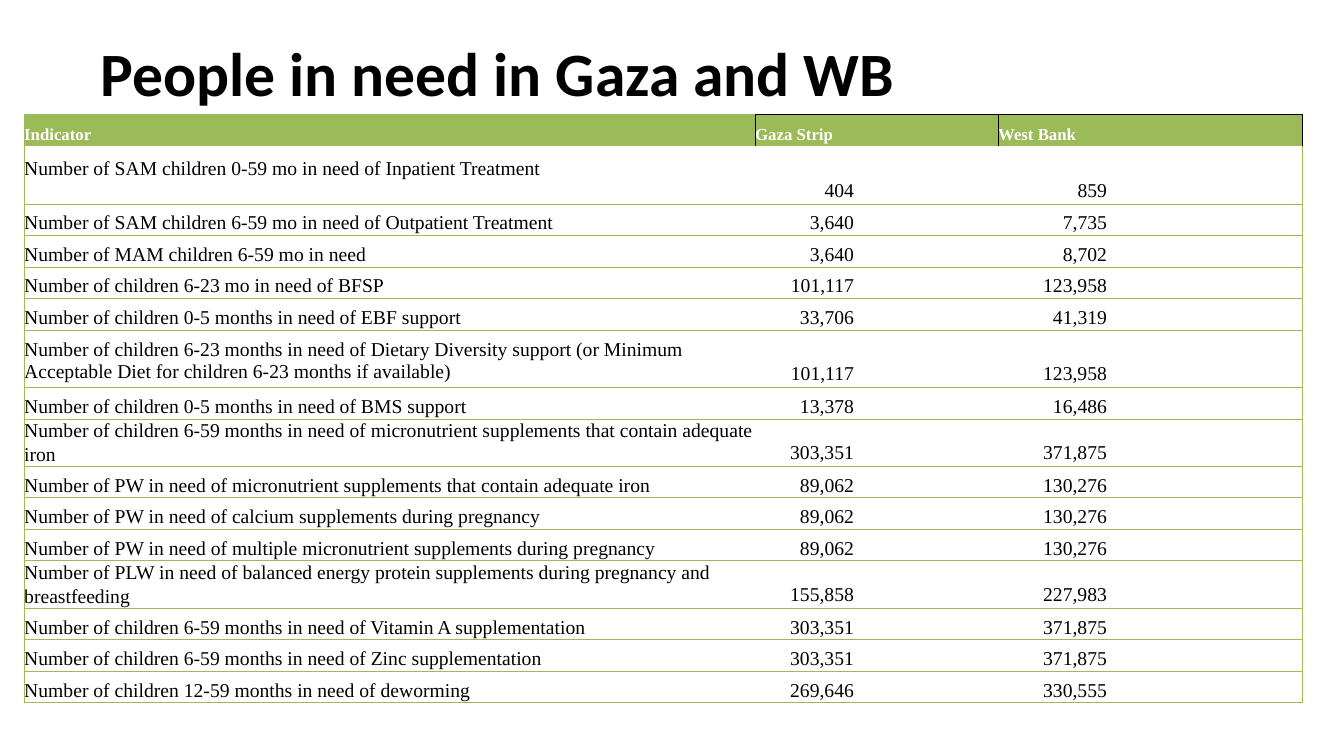
from dataclasses import dataclass

from lxml import etree
from pptx import Presentation, util as u
from pptx.dml.color import RGBColor
from pptx.enum import text as txt
from pptx.oxml import ns


@dataclass(frozen=True)
class Theme:
    green: str = "9BBA58"
    black: str = "000000"
    white: str = "FFFFFF"
    title_font: str = "Calibri"
    table_font: str = "Times New Roman"
    title_size: float = 44
    header_size: float = 12
    body_size: float = 14
    border: float = 0.5


@dataclass(frozen=True)
class RowStyle:
    """Row height in inches (None shares the rest); spacing in points."""
    height: float | None = None
    label_before: float = 5.5
    label_line: float | None = 16.1
    value_before: float = 5.5
    value_line: float = 16.1


THEME = Theme()
HEADER = RowStyle(0.32, 7.8, 14, 7.8, 14)
SPLIT_TOP = RowStyle(0.34, 7.2, 16.6)
SPLIT_BOTTOM = RowStyle(0.23, 0, 15.2, 0, 15.2)
PLAIN = RowStyle()
TALL = RowStyle(0.57, 6.7, None, 23)
TWO_LINE = RowStyle(0.47, 0, 16.6, 15.8)

TABLE_HEIGHT = 5.84
COLUMN_WIDTHS = [7.25, 2.41, 3.02]
VALUE_INDENTS = [0, 1.43, 1.94]
NO_GRID_STYLE = "{2D5ABB26-0587-4C30-8999-92F81FD0307C}"

ROWS = [
    (HEADER, "Indicator", "Gaza Strip", "West Bank"),
    (SPLIT_TOP, "Number of SAM children 0-59 mo in need of Inpatient Treatment", "", ""),
    (SPLIT_BOTTOM, "", "404", "859"),
    (PLAIN, "Number of SAM children 6-59 mo in need of Outpatient Treatment", "3,640", "7,735"),
    (PLAIN, "Number of MAM children 6-59 mo in need", "3,640", "8,702"),
    (PLAIN, "Number of children 6-23 mo in need of BFSP", "101,117", "123,958"),
    (PLAIN, "Number of children 0-5 months in need of EBF support", "33,706", "41,319"),
    (TALL, "Number of children 6-23 months in need of Dietary Diversity support (or Minimum "
           "Acceptable Diet for children 6-23 months if available)", "101,117", "123,958"),
    (PLAIN, "Number of children 0-5 months in need of BMS support", "13,378", "16,486"),
    (TWO_LINE, "Number of children 6-59 months in need of micronutrient supplements that contain "
               "adequate iron", "303,351", "371,875"),
    (PLAIN, "Number of PW in need of micronutrient supplements that contain adequate iron",
     "89,062", "130,276"),
    (PLAIN, "Number of PW in need of calcium supplements during pregnancy", "89,062", "130,276"),
    (PLAIN, "Number of PW in need of multiple micronutrient supplements during pregnancy",
     "89,062", "130,276"),
    (TWO_LINE, "Number of PLW in need of balanced energy protein supplements during pregnancy and\n"
               "breastfeeding", "155,858", "227,983"),
    (PLAIN, "Number of children 6-59 months in need of Vitamin A supplementation",
     "303,351", "371,875"),
    (PLAIN, "Number of children 6-59 months in need of Zinc supplementation", "303,351", "371,875"),
    (PLAIN, "Number of children 12-59 months in need of deworming", "269,646", "330,555"),
]


def write_text(frame, content, *, font, size, color, bold=False, align=txt.PP_ALIGN.LEFT,
               line=None, before=0, right_indent=0):
    """Write one paragraph per line of content; spacing is in points."""
    frame.word_wrap = True
    for index, words in enumerate(content.split("\n")):
        paragraph = frame.add_paragraph() if index else frame.paragraphs[0]
        paragraph.alignment = align
        paragraph.space_before = u.Pt(0 if index else before)
        if line:
            paragraph.line_spacing = u.Pt(line)
        if right_indent:
            paragraph._p.get_or_add_pPr().set("marR", str(u.Inches(right_indent)))
        paragraph.font.size = u.Pt(size)
        if not words:
            end = etree.SubElement(paragraph._p, ns.qn("a:endParaRPr"))
            end.set("sz", str(int(size * 100)))
            continue
        run = paragraph.add_run()
        run.text = words
        run.font.name = font
        run.font.size = u.Pt(size)
        run.font.bold = bold
        run.font.color.rgb = RGBColor.from_string(color)


def set_borders(cell, colors):
    """Draw cell sides; colors maps L, R, T, B to a colour."""
    properties = cell._tc.get_or_add_tcPr()
    sides = [side for side in "LRTB" if side in colors]
    for position, side in enumerate(sides):
        border = etree.Element(ns.qn(f"a:ln{side}"), w=str(u.Pt(THEME.border)))
        fill = etree.SubElement(border, ns.qn("a:solidFill"))
        etree.SubElement(fill, ns.qn("a:srgbClr"), val=colors[side])
        properties.insert(position, border)


def border_colors(style, column):
    if style is HEADER:
        if column:
            return dict.fromkeys("LRT", THEME.black)
        return {"L": THEME.green, "T": THEME.green, "R": THEME.black}
    sides = ["L", "", "R"][column]
    if style is not SPLIT_TOP:
        sides += "B"
        if style is not SPLIT_BOTTOM:
            sides += "T"
    return dict.fromkeys(sides, THEME.green)


def format_cell(cell, content, style, column):
    is_header = style is HEADER
    is_value = column > 0 and not is_header
    before = style.value_before if column else style.label_before
    cell.margin_left = cell.margin_right = cell.margin_bottom = 0
    cell.margin_top = u.Pt(before)
    cell.vertical_anchor = txt.MSO_ANCHOR.TOP
    if is_header:
        cell.fill.solid()
        cell.fill.fore_color.rgb = RGBColor.from_string(THEME.green)
    else:
        cell.fill.background()
    set_borders(cell, border_colors(style, column))
    write_text(cell.text_frame, content, font=THEME.table_font,
               size=THEME.header_size if is_header else THEME.body_size,
               color=THEME.white if is_header else THEME.black, bold=is_header,
               align=txt.PP_ALIGN.RIGHT if is_value else txt.PP_ALIGN.LEFT,
               line=style.value_line if column else style.label_line, before=before,
               right_indent=VALUE_INDENTS[column] if is_value else 0)


def add_title(slide, content):
    frame = slide.shapes.add_textbox(
        u.Inches(1), u.Inches(0.34), u.Inches(7.91), u.Inches(0.76)).text_frame
    frame.margin_left = frame.margin_right = frame.margin_bottom = 0
    frame.margin_top = u.Inches(0.01)
    write_text(frame, content, font=THEME.title_font, size=THEME.title_size,
               color=THEME.black, bold=True, before=1)


def add_needs_table(slide):
    table = slide.shapes.add_table(
        len(ROWS), len(COLUMN_WIDTHS), u.Inches(0.24), u.Inches(1.13),
        u.Inches(sum(COLUMN_WIDTHS)), u.Inches(TABLE_HEIGHT)).table
    table.first_row = table.horz_banding = False
    table._tbl.tblPr.find(ns.qn("a:tableStyleId")).text = NO_GRID_STYLE
    for column, width in zip(table.columns, COLUMN_WIDTHS):
        column.width = u.Inches(width)
    fixed = [style.height for style, *_ in ROWS if style.height]
    shared_height = (TABLE_HEIGHT - sum(fixed)) / (len(ROWS) - len(fixed))
    for row, (style, *contents) in zip(table.rows, ROWS):
        row.height = u.Inches(style.height or shared_height)
        for column, content in enumerate(contents):
            format_cell(row.cells[column], content, style, column)


def main():
    deck = Presentation()
    deck.slide_width, deck.slide_height = u.Inches(13.33), u.Inches(7.5)
    slide = deck.slides.add_slide(deck.slide_layouts[6])
    add_title(slide, "People in need in Gaza and WB")
    add_needs_table(slide)
    deck.save("out.pptx")


if __name__ == "__main__":
    main()
